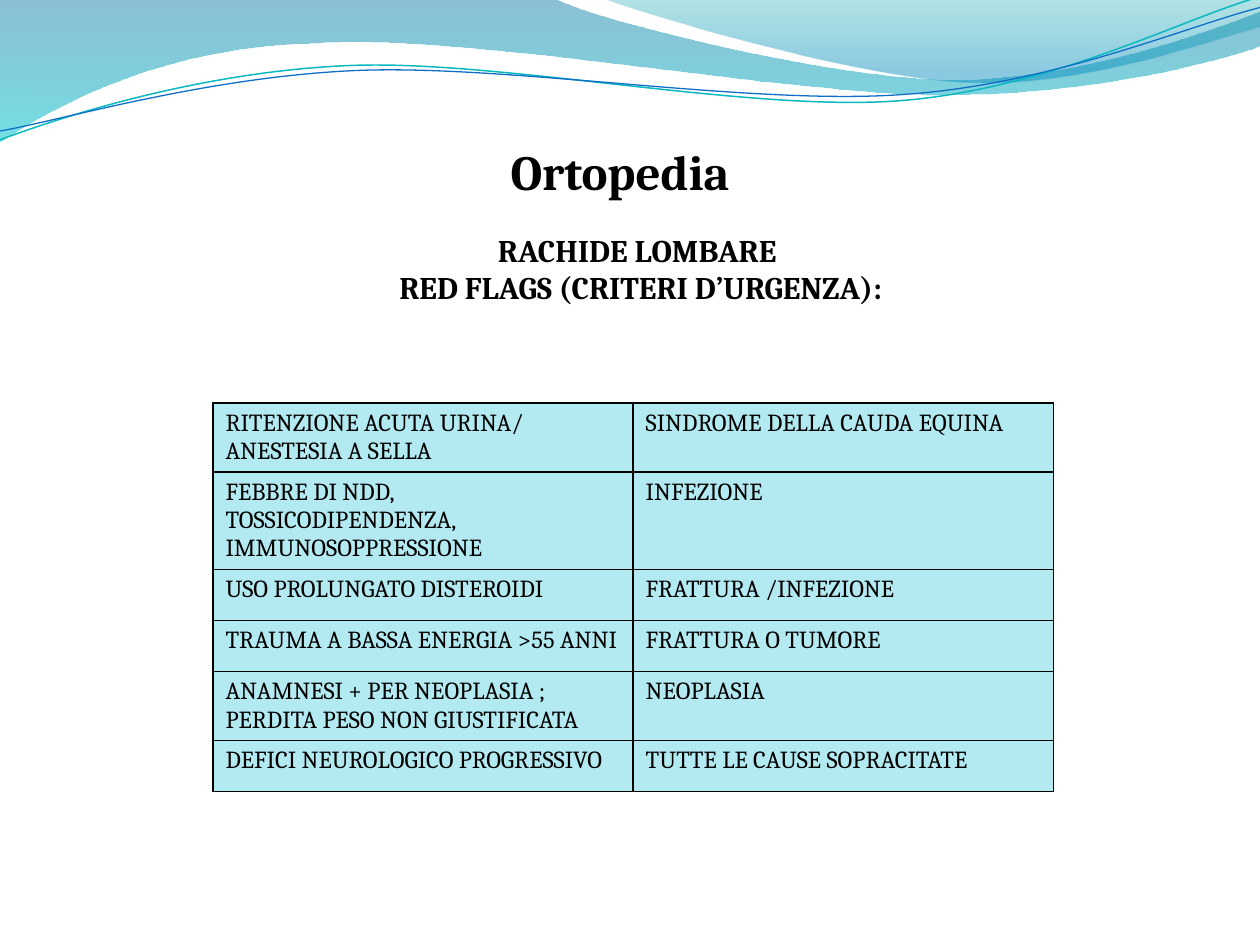
import math
from dataclasses import dataclass
from typing import Optional

from lxml import etree
from pptx import Presentation
from pptx.dml.color import RGBColor
from pptx.enum import text
from pptx.oxml import ns
from pptx.util import Inches, Pt


@dataclass(frozen=True)
class Theme:
    font: str = "Cambria"
    ink: str = "000000"
    cell: str = "B3EAF2"
    title_size: float = 28
    heading_size: float = 18
    table_size: float = 14
    border_width: float = 1


@dataclass(frozen=True)
class Stop:
    position: float
    color: str
    opacity: int


@dataclass(frozen=True)
class Wave:
    """Path steps hold two numbers for a line and six for a Bezier curve."""
    start: tuple
    steps: tuple
    gradient: tuple = ()
    line_color: Optional[str] = None
    line_width: float = 0
    tilt: float = 0
    center: tuple = (0, 0)


@dataclass(frozen=True)
class Row:
    sign: str
    suspicion: str


THEME = Theme()

WAVES = (
    Wave((0, 0), (
        (4.4, -0.01),
        (4.76, 0.17, 6.64, 0.63, 7.58, 0.63),
        (8.53, 0.63, 9.58, 0.26, 10, 0.09),
        (10.01, 0.36),
        (9.83, 0.44, 8.7, 0.76, 7.46, 0.75),
        (6.22, 0.75, 3.82, 0.28, 2.57, 0.34),
        (1.29, 0.36, 0.46, 0.83, -0.01, 1.13),
        (0, 0),
    ), gradient=(Stop(0, "0074A1", 45), Stop(1, "00C6CF", 55))),
    Wave((4.79, -0.01), (
        (5.09, 0.11, 6.82, 0.62, 7.69, 0.65),
        (8.56, 0.69, 9.61, 0.32, 10, 0.21),
        (10, 0),
        (4.79, -0.01),
    ), gradient=(Stop(0, "00A1A9", 30), Stop(0.8, "008BBF", 45))),
    Wave((0, 1.11), (
        (0.48, 0.93, 1.58, 0.57, 2.77, 0.52),
        (3.95, 0.47, 5.93, 0.89, 7.13, 0.8),
        (8.33, 0.71, 9.38, 0.15, 9.98, -0.02),
    ), line_color="0AB8BF", line_width=0.85, tilt=-2.7, center=(4.99, 0.58)),
    Wave((0, 1.04), (
        (0.47, 0.96, 1.64, 0.61, 2.83, 0.56),
        (4.03, 0.51, 5.97, 0.84, 7.17, 0.75),
        (8.36, 0.67, 9.41, 0.21, 10, 0.06),
    ), line_color="0F6FC6", line_width=0.75, tilt=-2.7, center=(5, 0.59)),
)

ROWS = (
    Row("RITENZIONE ACUTA URINA/ ANESTESIA A SELLA", "SINDROME DELLA CAUDA EQUINA"),
    Row("FEBBRE DI NDD, TOSSICODIPENDENZA, IMMUNOSOPPRESSIONE", "INFEZIONE"),
    Row("USO PROLUNGATO DISTEROIDI", "FRATTURA /INFEZIONE"),
    Row("TRAUMA A BASSA ENERGIA >55 ANNI", "FRATTURA O TUMORE"),
    Row("ANAMNESI + PER NEOPLASIA ; PERDITA PESO NON GIUSTIFICATA", "NEOPLASIA"),
    Row("DEFICI NEUROLOGICO PROGRESSIVO", "TUTTE LE CAUSE SOPRACITATE"),
)


def level_point(wave: Wave, x: float, y: float) -> tuple:
    """Take the wave's tilt out of a point; the shape's rotation restores it."""
    angle = math.radians(-wave.tilt)
    center_x, center_y = wave.center
    dx, dy = x - center_x, y - center_y
    return (
        Inches(center_x + dx * math.cos(angle) - dy * math.sin(angle)),
        Inches(center_y + dx * math.sin(angle) + dy * math.cos(angle)),
    )


def bend_segments(shape, steps: tuple) -> None:
    """Join the three line segments of each curve step into one Bezier curve."""
    segments = iter(list(shape.element.iter(ns.qn("a:lnTo"))))
    for step in steps:
        segment = next(segments)
        if len(step) == 6:
            curve = etree.Element(ns.qn("a:cubicBezTo"))
            segment.addprevious(curve)
            for part in (segment, next(segments), next(segments)):
                curve.append(part[0])
                part.getparent().remove(part)


def draw_wave(slide, wave: Wave) -> None:
    points = [level_point(wave, *wave.start)]
    for step in wave.steps:
        points += [level_point(wave, *pair) for pair in zip(step[::2], step[1::2])]
    builder = slide.shapes.build_freeform(*points[0])
    builder.add_line_segments(points[1:], close=bool(wave.gradient))
    shape = builder.convert_to_shape()
    bend_segments(shape, wave.steps)
    shape.rotation = wave.tilt
    shape.shadow.inherit = False
    if wave.gradient:
        shape.line.fill.background()
        fill_gradient(shape, wave.gradient)
    else:
        shape.fill.background()
        shape.line.color.rgb = RGBColor.from_string(wave.line_color)
        shape.line.width = Pt(wave.line_width)


def fill_gradient(shape, stops: tuple) -> None:
    """Fill from top to bottom with partly transparent colours."""
    shape.fill.gradient()
    shape.fill.gradient_angle = 270
    for target, stop in zip(shape.fill.gradient_stops, stops):
        target.position = stop.position
        target.color.rgb = RGBColor.from_string(stop.color)
    for color, stop in zip(shape.element.iter(ns.qn("a:srgbClr")), stops):
        etree.SubElement(color, ns.qn("a:alpha"), val=str(stop.opacity * 1000))


def format_runs(text_frame, size: float, bold: bool = False) -> None:
    for paragraph in text_frame.paragraphs:
        for run in paragraph.runs:
            run.font.name = THEME.font
            run.font.size = Pt(size)
            run.font.bold = bold
            run.font.color.rgb = RGBColor.from_string(THEME.ink)


def fill_placeholder(shape, box: tuple, content: str, size: float, anchor) -> None:
    """Place and format the text, in front of what is drawn so far."""
    shape.element.getparent().append(shape.element)
    shape.left, shape.top, shape.width, shape.height = map(Inches, box)
    frame = shape.text_frame
    frame.text = content
    frame.word_wrap = True
    frame.auto_size = text.MSO_AUTO_SIZE.NONE
    frame.vertical_anchor = anchor
    for paragraph in frame.paragraphs:
        paragraph.alignment = text.PP_ALIGN.CENTER
        paragraph.space_before = Pt(0)
        properties = paragraph._p.get_or_add_pPr()
        properties.set("marL", "0")
        properties.set("indent", "0")
        etree.SubElement(properties, ns.qn("a:buNone"))
    format_runs(frame, size, bold=True)


def format_cell(cell, content: str) -> None:
    cell.text = content
    format_runs(cell.text_frame, THEME.table_size)
    properties = cell._tc.get_or_add_tcPr()
    for side in ("lnL", "lnR", "lnT", "lnB"):
        line = etree.SubElement(properties, ns.qn(f"a:{side}"), w=str(Pt(THEME.border_width)))
        solid = etree.SubElement(line, ns.qn("a:solidFill"))
        etree.SubElement(solid, ns.qn("a:srgbClr"), val=THEME.ink)
    cell.fill.solid()
    cell.fill.fore_color.rgb = RGBColor.from_string(THEME.cell)


def add_red_flag_table(slide) -> None:
    frame = slide.shapes.add_table(
        len(ROWS), 2, Inches(1.69), Inches(3.2), Inches(6.67), Inches(3.71)
    )
    table = frame.table
    table.first_row = table.horz_banding = False
    for table_row, row in zip(table.rows, ROWS):
        table_row.height = Pt(29.2)
        for cell, content in zip(table_row.cells, (row.sign, row.suspicion)):
            format_cell(cell, content)
    frame.height = Inches(3.71)


def main() -> None:
    presentation = Presentation()
    presentation.slide_width, presentation.slide_height = Inches(10), Inches(7.5)
    slide = presentation.slides.add_slide(presentation.slide_layouts[1])
    for wave in WAVES:
        draw_wave(slide, wave)
    fill_placeholder(slide.shapes.title, (0.67, 1.07, 8.5, 0.57), "Ortopedia",
                     THEME.title_size, text.MSO_ANCHOR.MIDDLE)
    fill_placeholder(slide.placeholders[1], (0.91, 1.78, 8.35, 1.31),
                     "RACHIDE LOMBARE \nRED FLAGS (CRITERI D’URGENZA):",
                     THEME.heading_size, text.MSO_ANCHOR.TOP)
    add_red_flag_table(slide)
    presentation.save("out.pptx")


if __name__ == "__main__":
    main()
